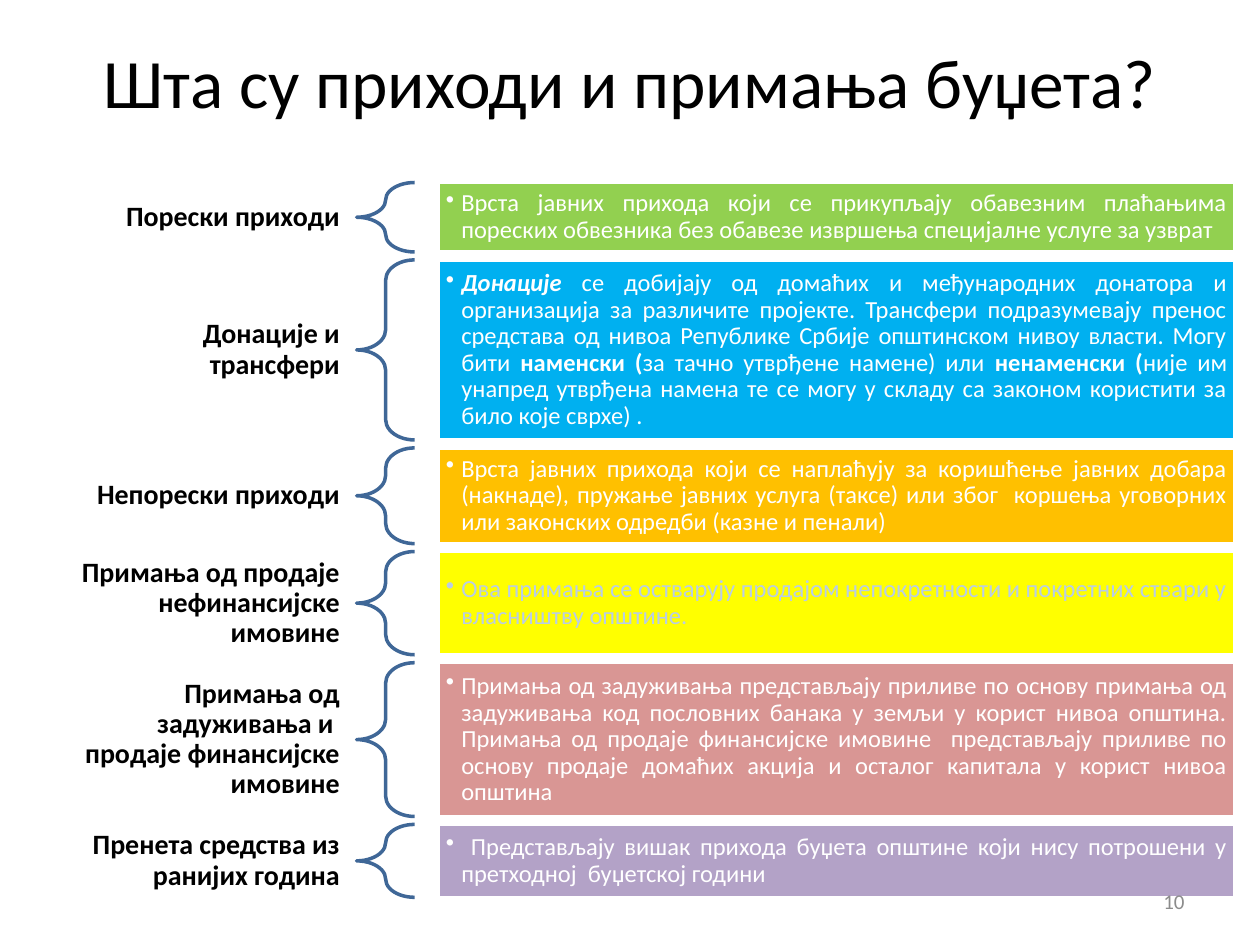
from dataclasses import dataclass

from pptx import Presentation
from pptx import util as u
from pptx.dml import color
from pptx.enum import shapes, text
from pptx.oxml import xmlchemy
from lxml import etree


@dataclass(frozen=True)
class Theme:
    font: str = "Calibri"
    ink: str = "000000"
    paper: str = "FFFFFF"
    brace: str = "3F6797"
    muted: str = "8C8C8C"
    pale: str = "B9CDE5"
    title_size: float = 39.6
    label_size: float = 16
    body_size: float = 14
    number_size: float = 12
    line_width: float = 2


@dataclass(frozen=True)
class Box:
    left: float
    top: float
    width: float
    height: float

    def lengths(self):
        return [u.Cm(n) for n in (self.left, self.top, self.width, self.height)]


@dataclass(frozen=True)
class Revenue:
    label: str
    height: float
    fill: str
    spans: tuple
    ink: str = Theme.paper


THEME = Theme()
ROW_GAP = 0.16
REVENUES = (
    Revenue("Порески приходи", 1.4, "92D050", (
        ("Врста јавних прихода који се прикупљају обавезним плаћањима пореских "
         "обвезника без обавезе извршења специјалне услуге за узврат", ""),)),
    Revenue("Донације и трансфери", 3.63, "00B0F0", (
        ("Донације ", "bi"),
        ("се добијају од домаћих и међународних донатора и организација за различите "
         "пројекте. Трансфери подразумевају пренос средстава од нивоа Републике Србије "
         "општинском нивоу власти. Могу бити ", ""),
        ("наменски (", "b"),
        ("за тачно утврђене намене) или ", ""),
        ("ненаменски (", "b"),
        ("није им унапред утврђена намена те се могу у складу са законом користити "
         "за било које сврхе) .", ""))),
    Revenue("Непорески приходи", 1.93, "FFC000", (
        ("Врста јавних прихода који се наплаћују за коришћење јавних добара (накнаде), "
         "пружање јавних услуга (таксе) или због  коршења уговорних или законских "
         "одредби (казне и пенали)", ""),)),
    Revenue("Примања од продаје нефинансијске имовине", 2.08, "FFFF00", (
        ("Ова примања се остварују продајом непокретности и покретних ствари у "
         "власништву општине.", ""),), THEME.pale),
    Revenue("Примања од задуживања и  продаје финансијске имовине", 3.1, "D99694", (
        ("Примања од задуживања представљају приливе по основу примања од задуживања "
         "код пословних банака у земљи у корист нивоа општина. Примања од продаје "
         "финансијске имовине  представљају приливе по основу продаје домаћих акција "
         "и осталог капитала у корист нивоа општина", ""),)),
    Revenue("Пренета средства из ранијих година", 1.47, "B3A2C7", (
        (" Представљају вишак прихода буџета општине који нису потрошени у претходној  "
         "буџетској години", ""),)),
)


def rgb(value):
    return color.RGBColor.from_string(value)


def set_frame(shape, margin_x, margin_y):
    frame = shape.text_frame
    frame.word_wrap = True
    frame.vertical_anchor = text.MSO_ANCHOR.MIDDLE
    frame.margin_left = frame.margin_right = u.Cm(margin_x)
    frame.margin_top = frame.margin_bottom = u.Cm(margin_y)
    return frame.paragraphs[0]


def style(para, size, ink, align):
    para.alignment = align
    para.font.name = THEME.font
    para.font.size = u.Pt(size)
    para.font.color.rgb = rgb(ink)


def add_text(page, box, words, size, ink, align, margin_x=0.25, margin_y=0.13):
    para = set_frame(page.shapes.add_textbox(*box.lengths()), margin_x, margin_y)
    para.text = words
    style(para, size, ink, align)
    return para


def add_outlined(page, kind, box, line):
    shape = page.shapes.add_shape(kind, *box.lengths())
    shape.shadow.inherit = False
    shape.line.color.rgb = rgb(line)
    shape.line.width = u.Pt(THEME.line_width)
    return shape


def add_bullet(para, indent):
    properties = para._p.get_or_add_pPr()
    properties.set("marL", str(u.Cm(indent)))
    properties.set("indent", str(-u.Cm(indent)))
    bullet = etree.SubElement(properties, xmlchemy.qn("a:buChar"))
    bullet.set("char", "•")
    properties.insert_element_before(bullet, "a:tabLst", "a:defRPr", "a:extLst")


def add_label(page, box, words):
    para = add_text(page, box, words, THEME.label_size, THEME.ink,
                    text.PP_ALIGN.RIGHT, 0.31, 0.1)
    para.font.bold = True
    para.line_spacing = 0.9


def add_brace(page, box):
    brace = add_outlined(page, shapes.MSO_SHAPE.LEFT_BRACE, box, THEME.brace)
    brace.fill.background()
    brace.adjustments[0] = 0.35
    brace.adjustments[1] = 0.5


def add_panel(page, box, revenue):
    panel = add_outlined(page, shapes.MSO_SHAPE.RECTANGLE, box, THEME.paper)
    panel.fill.solid()
    panel.fill.fore_color.rgb = rgb(revenue.fill)
    para = set_frame(panel, 0.15, 0.15)
    para.line_spacing = 0.9
    style(para, THEME.body_size, revenue.ink, text.PP_ALIGN.JUSTIFY)
    add_bullet(para, 0.31)
    for words, marks in revenue.spans:
        span = para.add_run()
        span.text = words
        span.font.bold = "b" in marks
        span.font.italic = "i" in marks


def add_row(page, box, revenue):
    add_label(page, Box(box.left, box.top, 5.89, box.height), revenue.label)
    add_brace(page, Box(box.left + 5.92, box.top, 1.17, box.height))
    panel_offset = 7.57
    add_panel(page, Box(box.left + panel_offset, box.top,
                        box.width - panel_offset, box.height), revenue)


def add_revenues(page, box):
    top = box.top
    for revenue in REVENUES:
        add_row(page, Box(box.left, top, box.width, revenue.height), revenue)
        top += revenue.height + ROW_GAP


def main():
    deck = Presentation()
    deck.slide_width, deck.slide_height = u.Cm(25.4), u.Cm(19.05)
    page = deck.slides.add_slide(deck.slide_layouts[6])
    add_text(page, Box(1.27, 0.76, 22.86, 1.73), "Шта су приходи и примања буџета?",
             THEME.title_size, THEME.ink, text.PP_ALIGN.CENTER)
    add_revenues(page, Box(1.27, 3.68, 23.62, 14.41))
    add_text(page, Box(18.21, 17.65, 5.92, 1.02), "10",
             THEME.number_size, THEME.muted, text.PP_ALIGN.RIGHT)
    deck.save("out.pptx")


if __name__ == "__main__":
    main()
